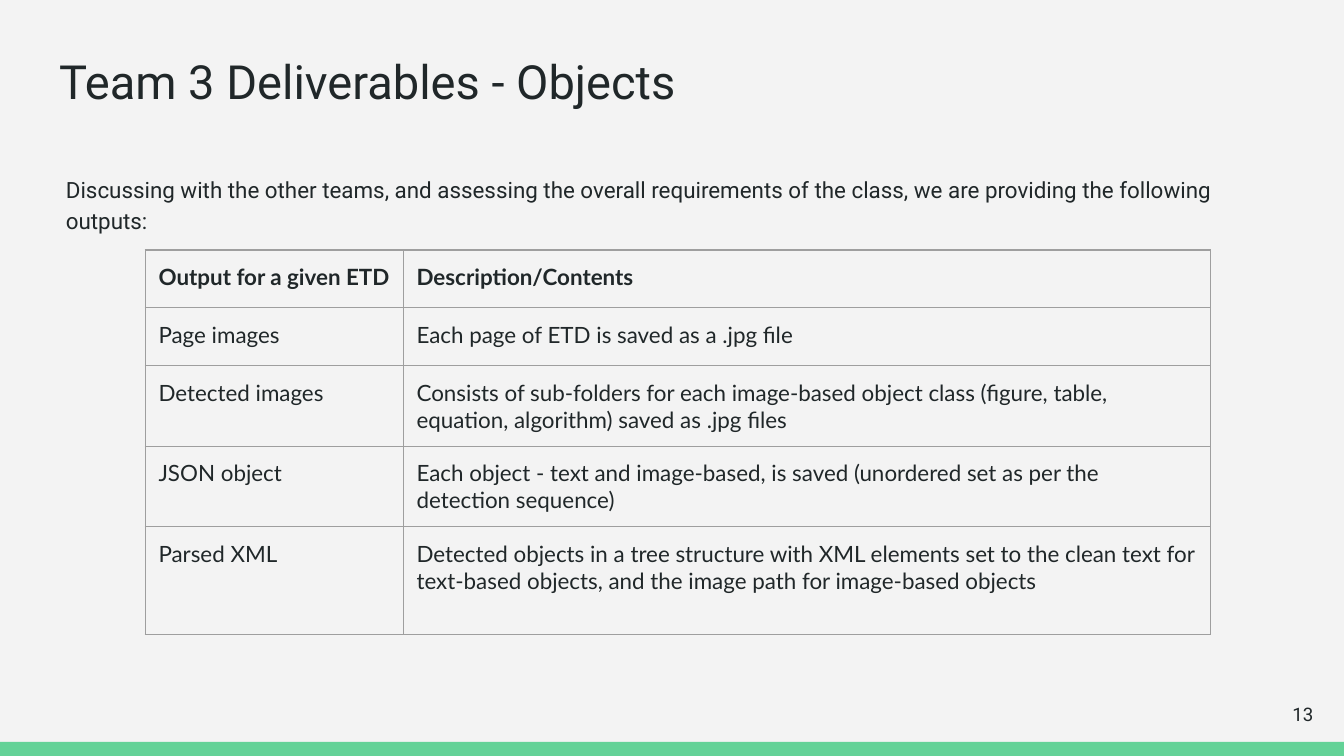
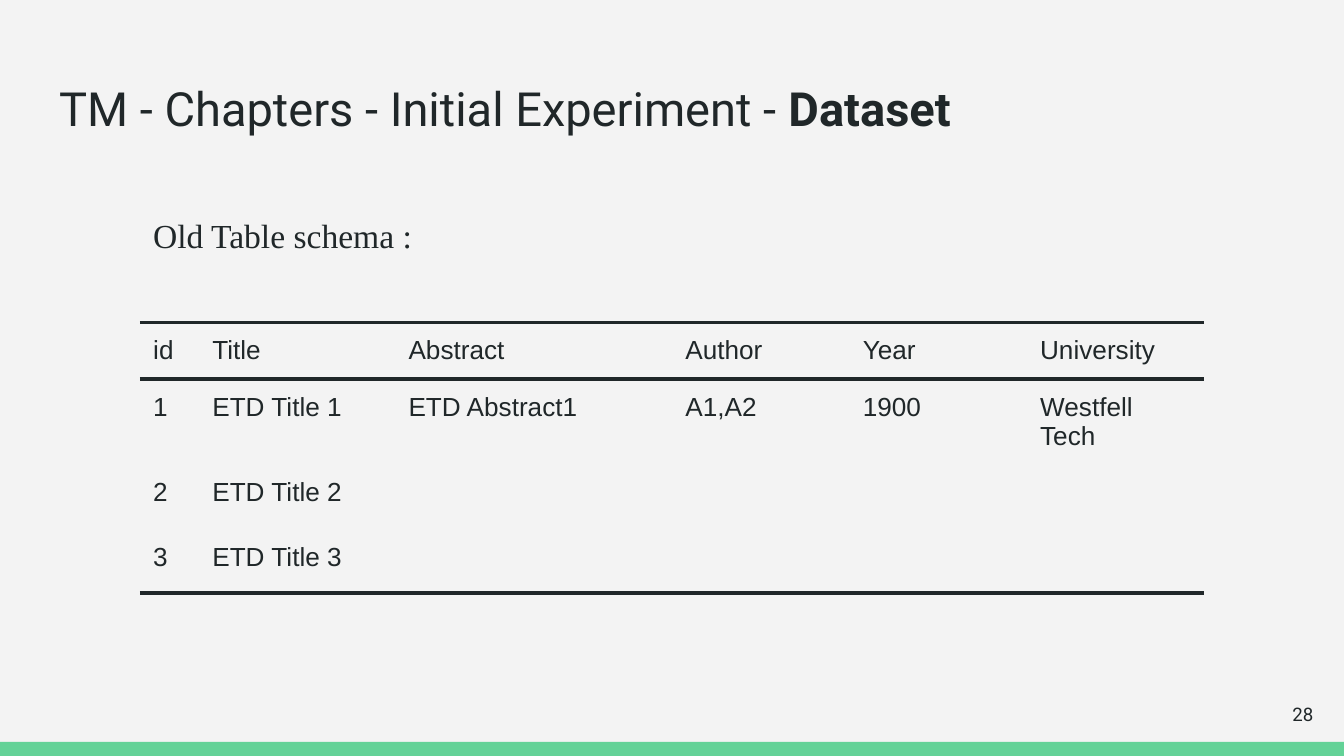
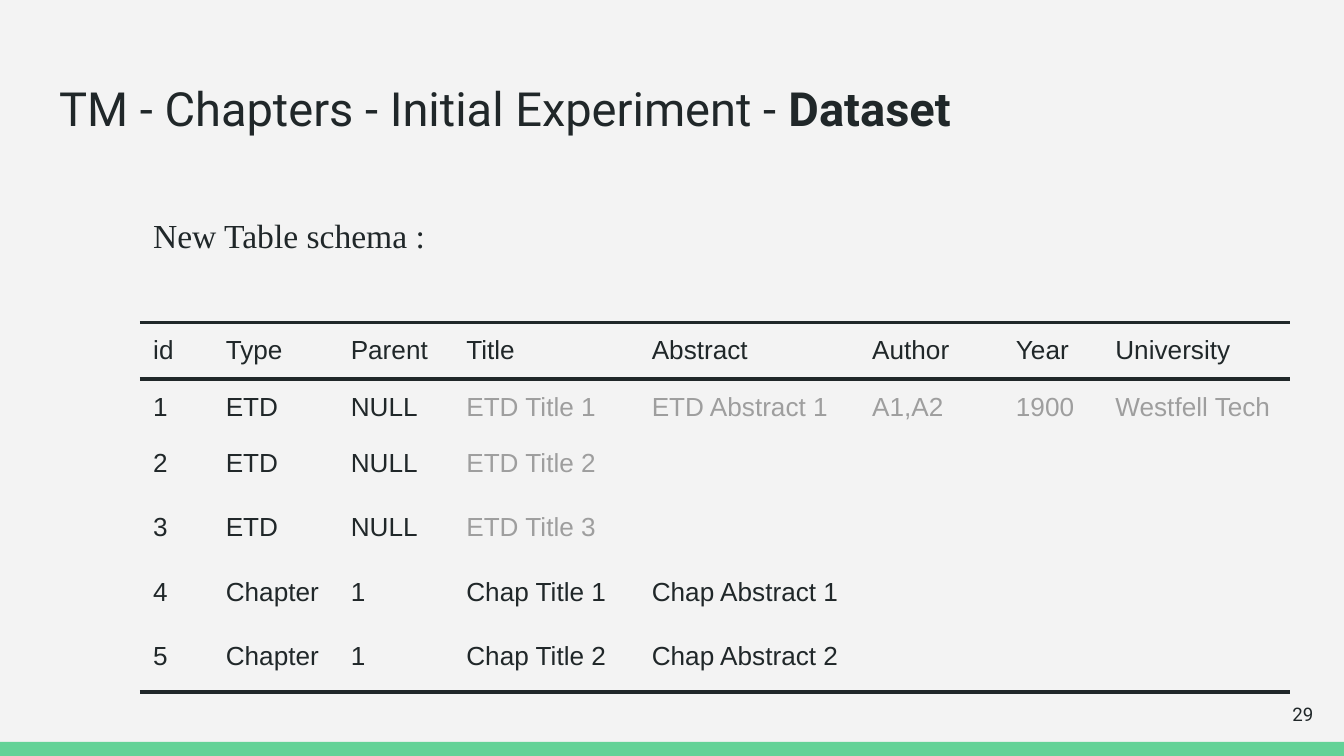
from lxml.etree import SubElement
from pptx import Presentation
from pptx.dml.color import RGBColor
from pptx.enum.shapes import MSO_SHAPE as Preset
from pptx.enum.text import MSO_ANCHOR as Anchor, MSO_AUTO_SIZE as AutoSize, PP_ALIGN as Align
from pptx.oxml.ns import qn
from pptx.util import Emu, Inches, Pt

COLUMNS, ROWS = 100, 56.25
INK, MUTED, PAPER, GREEN = "202729", "9E9E9E", "F3F3F3", "63D297"
TITLE_AND_BODY, TITLE_ONLY = 1, 5


def colour(hex_code):
    return RGBColor.from_string(hex_code)


def style_runs(paragraph, font, size, tint=INK, bold=False):
    for run in paragraph.runs:
        run.font.name, run.font.size, run.font.bold = font, Pt(size), bold
        run.font.color.rgb = colour(tint)


def no_lines(row, last):
    """Edges of a grid table: every side has a thin grey line."""
    return {side: (MUTED, 0.75) for side in "LRTB"}


def ruled_lines(row, last):
    """Edges of a ruled table: lines around the header and below the last row."""
    rule = (INK, 2.25)
    return {"T": rule if row <= 1 else None, "B": rule if row in (0, last) else None}


grid_lines = no_lines


class Deck:
    def __init__(self):
        self.deck = Presentation()
        self.deck.slide_width, self.deck.slide_height = Inches(10), Inches(5.625)
        background = self.deck.slide_master.background.fill
        background.solid()
        background.fore_color.rgb = colour(PAPER)
        self.slide = None

    def across(self, columns):
        return Emu(round(self.deck.slide_width * columns / COLUMNS))

    def down(self, rows):
        return Emu(round(self.deck.slide_height * rows / ROWS))

    def box(self, left, top, width, height):
        return self.across(left), self.down(top), self.across(width), self.down(height)

    def new_slide(self, layout, number):
        self.slide = self.deck.slides.add_slide(self.deck.slide_layouts[layout])
        band = self.slide.shapes.add_shape(Preset.RECTANGLE, *self.box(0, 55.2, COLUMNS, 1.05))
        band.shadow.inherit = False
        band.fill.solid()
        band.fill.fore_color.rgb = colour(GREEN)
        band.line.fill.background()
        self.label(number, (92.7, 51, 6, 4.3), "Roboto", 10, Align.RIGHT, Anchor.MIDDLE)

    def fill_frame(self, shape, text, align=Align.LEFT, anchor=Anchor.TOP):
        """Set text and the shared frame settings; return the paragraph."""
        frame = shape.text_frame
        frame.text = text
        frame.word_wrap, frame.auto_size = True, AutoSize.NONE
        frame.vertical_anchor = anchor
        frame.margin_left = frame.margin_right = Inches(0.1)
        frame.margin_top = frame.margin_bottom = Inches(0.1)
        paragraph = frame.paragraphs[0]
        paragraph.alignment = align
        return paragraph

    def place(self, placeholder, left, top, width, height):
        placeholder.left, placeholder.top, placeholder.width, placeholder.height = self.box(
            left, top, width, height)

    def title(self, text, top, emphasis=""):
        heading = self.slide.shapes.title
        self.place(heading, 3.4, top, 93.2, 6.3)
        paragraph = self.fill_frame(heading, text)
        style_runs(paragraph, "Roboto", 25.2)
        if emphasis:
            paragraph.add_run().text = emphasis
            style_runs(paragraph, "Roboto", 25.2)
            paragraph.runs[-1].font.bold = True

    def body(self, text):
        intro = self.slide.placeholders[1]
        self.place(intro, 3.9, 11.8, 93.2, 35.9)
        paragraph = self.fill_frame(intro, text)
        paragraph.line_spacing, paragraph.space_before = 1.15, Pt(0)
        properties = paragraph._p.get_or_add_pPr()
        properties.set("marL", "0")
        properties.set("indent", "0")
        SubElement(properties, qn("a:buNone"))
        style_runs(paragraph, "Roboto", 12)

    def label(self, text, area, font, size, align=Align.LEFT, anchor=Anchor.TOP):
        caption = self.slide.shapes.add_textbox(*self.box(*area))
        style_runs(self.fill_frame(caption, text, align, anchor), font, size)

    def table(self, corner, widths, heights, records, font, size, edges,
              bold_header=False, is_muted=lambda record, column: False):
        area = self.box(*corner, sum(widths), sum(heights))
        table = self.slide.shapes.add_table(len(records), len(widths), *area).table
        table.first_row = table.horz_banding = False
        for column, width in zip(table.columns, widths):
            column.width = self.across(width)
        for row, height in zip(table.rows, heights):
            row.height = self.down(height)
        for r, record in enumerate(records):
            for c in range(len(widths)):
                cell = table.cell(r, c)
                cell.text = record[c] if c < len(record) else ""
                cell.margin_left = cell.margin_right = Inches(0.1)
                cell.margin_top = cell.margin_bottom = Inches(0.1)
                paragraph = cell.text_frame.paragraphs[0]
                if cell.text:
                    tint = MUTED if is_muted(record, c) else INK
                    style_runs(paragraph, font, size, tint, bold_header and r == 0)
                else:
                    SubElement(paragraph._p, qn("a:endParaRPr"), sz=str(size * 100))
                self.cell_edges(cell, edges(r, len(records) - 1))
                cell.fill.background()

    @staticmethod
    def cell_edges(cell, edges):
        properties = cell._tc.get_or_add_tcPr()
        for side in "LRTB":
            line = SubElement(properties, qn(f"a:ln{side}"))
            if edges.get(side):
                tint, points = edges[side]
                line.set("w", str(Pt(points)))
                SubElement(SubElement(line, qn("a:solidFill")), qn("a:srgbClr"), val=tint)
            else:
                SubElement(line, qn("a:noFill"))

    def schema_slide(self, number, caption, caption_width, widths, records, **options):
        self.new_slide(TITLE_ONLY, number)
        self.title("TM - Chapters - Initial Experiment - ", 4.9, "Dataset")
        heights = [4.2, 4.2] + [4.78] * (len(records) - 2)
        self.table((10.4, 24), widths, heights, records, "Arial", 14, ruled_lines, **options)
        self.label(caption, (10.4, 15, caption_width, 5), "Times New Roman", 18)


DELIVERABLES = [
    ("Output for a given ETD", "Description/Contents"),
    ("Page images", "Each page of ETD is saved as a .jpg file"),
    ("Detected images", "Consists of sub-folders for each image-based object class "
     "(figure, table, equation, algorithm) saved as .jpg files"),
    ("JSON object", "Each object - text and image-based, is saved "
     "(unordered set as per the detection sequence)"),
    ("Parsed XML", "Detected objects in a tree structure with XML elements set to the clean "
     "text for text-based objects, and the image path for image-based objects"),
]
OLD_SCHEMA = [
    ("id", "Title", "Abstract", "Author", "Year", "University"),
    ("1", "ETD Title 1", "ETD Abstract1", "A1,A2", "1900", "Westfell Tech"),
    ("2", "ETD Title 2"),
    ("3", "ETD Title 3"),
]
NEW_SCHEMA = [
    ("id", "Type", "Parent", "Title", "Abstract", "Author", "Year", "University"),
    ("1", "ETD", "NULL", "ETD Title 1", "ETD Abstract 1", "A1,A2", "1900", "Westfell Tech"),
    ("2", "ETD", "NULL", "ETD Title 2"),
    ("3", "ETD", "NULL", "ETD Title 3"),
    ("4", "Chapter", "1", "Chap Title 1", "Chap Abstract 1"),
    ("5", "Chapter", "1", "Chap Title 2", "Chap Abstract 2"),
]


def is_inherited(record, column):
    """ETD details that the new schema takes over from the old one."""
    return record[1] == "ETD" and column >= 3


def main():
    show = Deck()

    show.new_slide(TITLE_AND_BODY, "13")
    show.title("Team 3 Deliverables - Objects", 2.9)
    show.body("Discussing with the other teams, and assessing the overall requirements "
              "of the class, we are providing the following outputs:")
    show.table((10.8, 18.6), [19.2, 60.1], [4.3, 4.3, 6, 6, 8], DELIVERABLES,
               "Lato", 12, grid_lines, bold_header=True)

    show.schema_slide("28", "Old Table schema :", 22.1,
                      [4.4, 14.6, 20.6, 13.2, 13.2, 13.2], OLD_SCHEMA)
    show.schema_slide("29", "New Table schema :", 27.5,
                      [5.4, 9.3, 8.6, 13.8, 16.4, 10.7, 7.4, 14], NEW_SCHEMA,
                      is_muted=is_inherited)

    show.deck.save("out.pptx")


if __name__ == "__main__":
    main()
